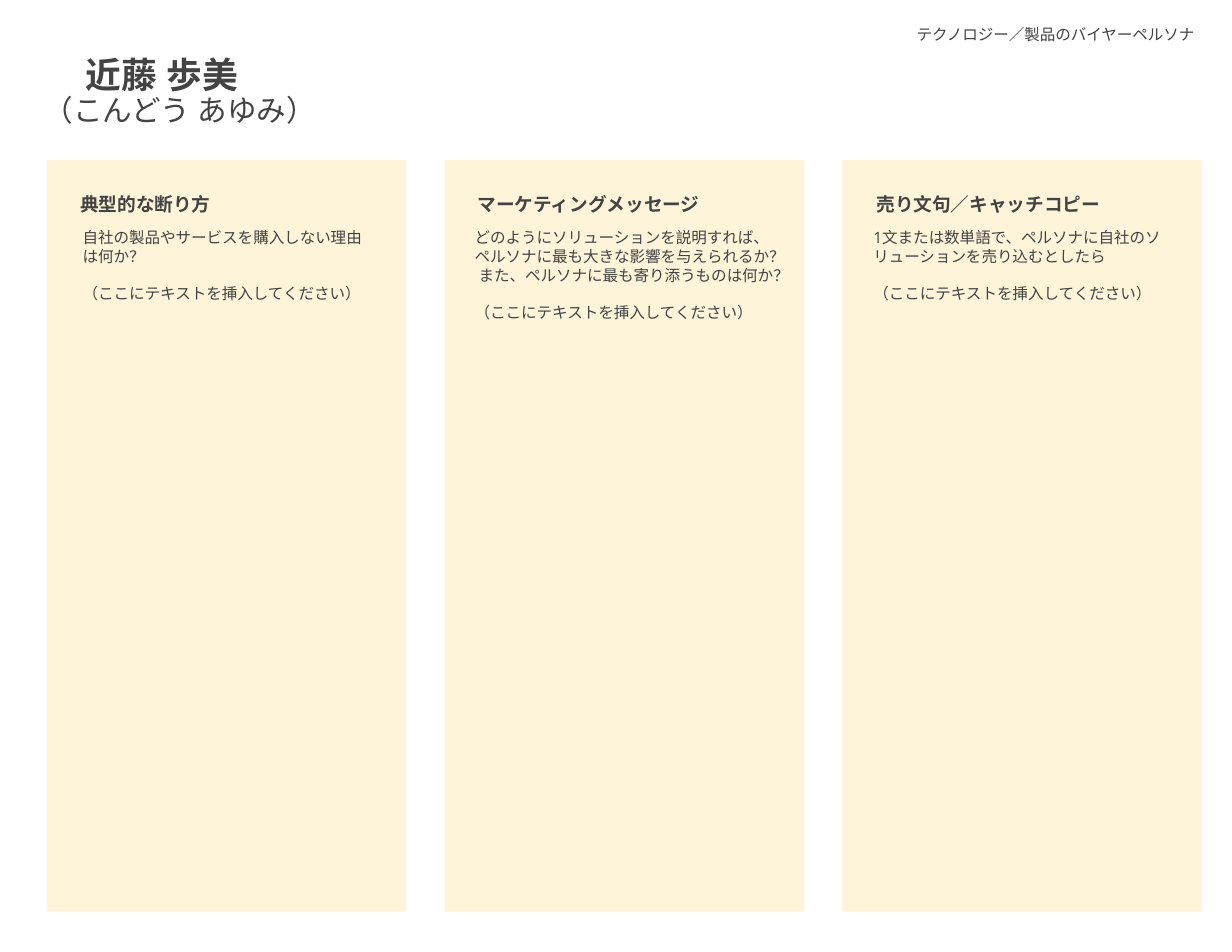
from dataclasses import dataclass

from lxml import etree
from pptx import Presentation
from pptx.dml.color import RGBColor
from pptx.enum.shapes import MSO_SHAPE
from pptx.enum.text import MSO_ANCHOR, MSO_AUTO_SIZE, PP_ALIGN
from pptx.oxml.ns import qn
from pptx.util import Pt

ROUND_RECT = MSO_SHAPE.ROUNDED_RECTANGLE
TOP, NO_FIT = MSO_ANCHOR.TOP, MSO_AUTO_SIZE.NONE
LEFT, CENTER = PP_ALIGN.LEFT, PP_ALIGN.CENTER


@dataclass(frozen=True)
class Theme:
    font: str = "Open Sans"
    ink: RGBColor = RGBColor(0x43, 0x43, 0x43)
    panel: RGBColor = RGBColor(0xFD, 0xF4, 0xD9)
    name_size: int = 23
    reading_size: int = 19
    heading_size: int = 12
    body_size: int = 10


THEME = Theme()
PANEL_LEFT, PANEL_TOP, PANEL_STEP = 30.2, 103, 255.7
PANEL_WIDTH, PANEL_HEIGHT = 231, 483
HEADING_TOP, HEADING_HEIGHT = 113, 37.4
BODY_TOP, BODY_HEIGHT = 143.3, 92
PROMPT = "（ここにテキストを挿入してください）"

# Heading, question, (left, width) of the heading, (left, width) of the text
COLUMNS = [
    ("典型的な断り方", "自社の製品やサービスを購入しない理由は何か？",
     (42.5, 163), (46.1, 202.3)),
    ("マーケティングメッセージ",
     "どのようにソリューションを説明すれば、ペルソナに最も大きな影響を与えられるか？ "
     "また、ペルソナに最も寄り添うものは何か？",
     (298.1, 163), (298.1, 211)),
    ("売り文句／キャッチコピー",
     "1文または数単語で、ペルソナに自社のソリューションを売り込むとしたら",
     (554.4, 177), (554.4, 208)),
]


def apply(target, values):
    for name, value in values.items():
        setattr(target, name, value)


def place(sp, left, top, width, height):
    box = dict(left=left, top=top, width=width, height=height)
    apply(sp, {name: Pt(value) for name, value in box.items()})


def set_frame(sp, inset_x, inset_y):
    tf = sp.text_frame
    apply(tf, dict(word_wrap=True, auto_size=NO_FIT, vertical_anchor=TOP,
                   margin_left=Pt(inset_x), margin_right=Pt(inset_x),
                   margin_top=Pt(inset_y), margin_bottom=Pt(inset_y)))
    return tf


def write(p, text, size, bold=False, spacing=1.0, align=LEFT, after=0):
    apply(p, dict(line_spacing=spacing, alignment=align,
                  space_before=Pt(0), space_after=Pt(after)))
    r = p.add_run()
    r.text = text
    apply(r.font, dict(name=THEME.font, size=Pt(size), bold=bold))
    r.font.color.rgb = THEME.ink
    etree.SubElement(r.font._element, qn("a:ea"), typeface=THEME.font)


def remove_bullet(p):
    pPr = p._p.get_or_add_pPr()
    pPr.set("marL", "0")
    pPr.set("indent", "0")
    etree.SubElement(pPr, qn("a:buNone"))


def add_panel(slide, left):
    sp = slide.shapes.add_shape(ROUND_RECT, Pt(left), Pt(PANEL_TOP),
                                Pt(PANEL_WIDTH), Pt(PANEL_HEIGHT))
    sp.adjustments[0] = 0
    sp.shadow.inherit = False
    sp.fill.solid()
    sp.fill.fore_color.rgb = THEME.panel
    sp.line.fill.background()


def add_heading(slide, text, left, width):
    sp = slide.shapes.add_textbox(Pt(left), Pt(HEADING_TOP),
                                  Pt(width), Pt(HEADING_HEIGHT))
    tf = set_frame(sp, 9, 9)
    write(tf.paragraphs[0], text, THEME.heading_size, bold=True, spacing=1.15)


def add_question(slide, text, left, width):
    sp = slide.shapes.add_textbox(Pt(left), Pt(BODY_TOP),
                                  Pt(width), Pt(BODY_HEIGHT))
    tf = set_frame(sp, 7.2, 3.6)
    write(tf.paragraphs[0], text, THEME.body_size, after=12)
    write(tf.add_paragraph(), PROMPT, THEME.body_size)


def fill_title(sp):
    place(sp, 13, 29.5, 205, 60.5)
    tf = set_frame(sp, 7.2, 7.2)
    write(tf.paragraphs[0], "近藤 歩美　", THEME.name_size,
          bold=True, spacing=0.9, align=CENTER)
    write(tf.add_paragraph(), "（こんどう あゆみ）", THEME.reading_size,
          spacing=0.9, align=CENTER)


def fill_tag(sp):
    place(sp, 580.3, 5, 198, 24.5)
    p = set_frame(sp, 9, 9).paragraphs[0]
    write(p, "テクノロジー／製品のバイヤーペルソナ", THEME.body_size, spacing=1.15)
    remove_bullet(p)


def main():
    prs = Presentation()
    prs.slide_width, prs.slide_height = Pt(792), Pt(612)
    slide = prs.slides.add_slide(prs.slide_layouts[1])
    fill_title(slide.shapes.title)
    fill_tag(slide.placeholders[1])
    for i, (heading, question, heading_span, body_span) in enumerate(COLUMNS):
        add_panel(slide, PANEL_LEFT + i * PANEL_STEP)
        add_heading(slide, heading, *heading_span)
        add_question(slide, question, *body_span)
    prs.save("out.pptx")


if __name__ == "__main__":
    main()
